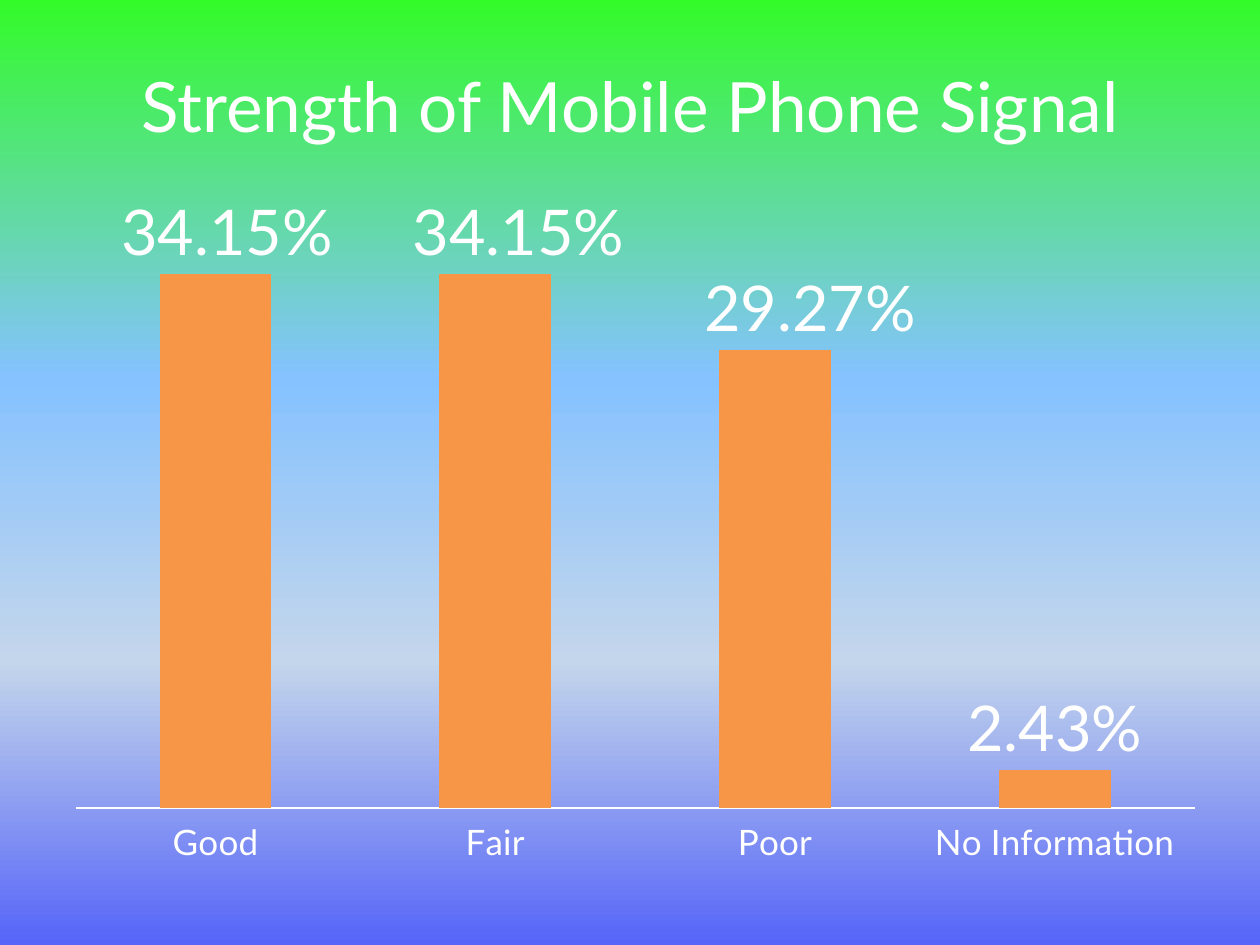
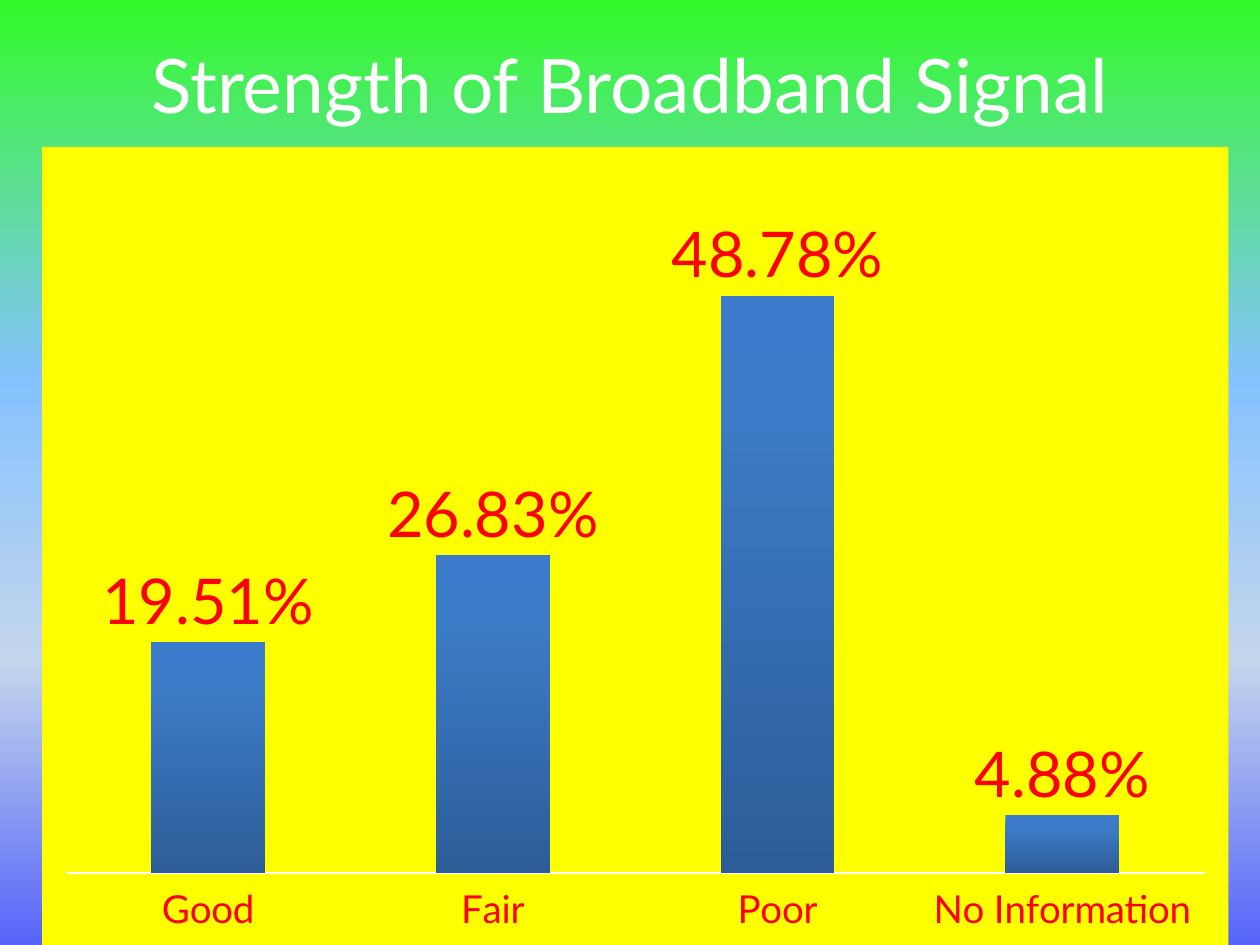
from dataclasses import dataclass
from typing import Optional

from lxml import etree
from pptx import Presentation
from pptx.chart.chart import Chart
from pptx.chart.data import CategoryChartData
from pptx.dml.color import RGBColor
from pptx.dml.fill import FillFormat
from pptx.enum.chart import XL_CHART_TYPE as ChartType
from pptx.enum.chart import XL_LABEL_POSITION as LabelPosition
from pptx.enum.chart import XL_TICK_LABEL_POSITION as TickLabels
from pptx.enum.chart import XL_TICK_MARK as TickMark
from pptx.enum.text import MSO_ANCHOR as Anchor
from pptx.enum.text import MSO_AUTO_SIZE as AutoSize
from pptx.enum.text import PP_ALIGN as Align
from pptx.oxml import parse_xml
from pptx.oxml.ns import nsdecls, qn
from pptx.slide import Slide
from pptx.util import Pt

PX = 7620  # EMU in one px, 120 px to the inch
WHITE, RED, YELLOW, ORANGE = "FFFFFF", "FF0000", "FFFF00", "F79646"
TEXT_FONT, CHART_FONT = "Lato", "Calibri"
LABEL_SIZE = 36
RATINGS = ("Good", "Fair", "Poor", "No Information")
TITLE_ONLY = 5

Stops = tuple[tuple[int, str], ...]
SKY: Stops = ((0, "33FB29"), (40, "85C2FF"), (70, "C4D6EB"), (100, "5665F8"))
BLUE_SHEEN: Stops = ((0, "3A7CCB"), (20, "3C7BC7"), (100, "2C5D98"))


@dataclass(frozen=True)
class Box:
    left: int
    top: int
    width: int
    height: int

    def emu(self) -> tuple[int, int, int, int]:
        return self.left * PX, self.top * PX, self.width * PX, self.height * PX


@dataclass(frozen=True)
class SignalPage:
    title: str
    title_box: Box
    title_size: float
    chart_box: Box
    shares: tuple[float, ...]
    axis_max: int
    text_color: str
    axis_size: int
    bar_color: Optional[str] = None  # None gives the blue sheen
    panel_color: Optional[str] = None
    label_shifts: tuple[float, ...] = (0, 0, 0, 0)  # share of chart width


PAGES = (
    SignalPage("Strength of Mobile Phone Signal", Box(60, 50, 1080, 100), 39.6,
               Box(50, 160, 1110, 670), (34.15, 34.15, 29.27, 2.43), 40,
               WHITE, 20, bar_color=ORANGE, label_shifts=(0.01, 0.02, 0.03, 0)),
    SignalPage("Strength of Broadband Signal", Box(60, 30, 1080, 100), 42.9,
               Box(40, 140, 1130, 760), (19.51, 26.83, 48.78, 4.88), 60,
               RED, 22, panel_color=YELLOW),
)


def rgb(color: str) -> RGBColor:
    return RGBColor.from_string(color)


def style_font(font, size: float, color: str, name: str = TEXT_FONT) -> None:
    font.size = Pt(size)
    font.name = name
    font.bold = False
    font.color.rgb = rgb(color)


def fill_downwards(fill: FillFormat, owner, stops: Stops) -> None:
    """Give the fill inside the owner element a gradient from top to bottom."""
    fill.gradient()
    fill.gradient_angle = 270
    stop_list = owner.find(".//" + qn("a:gsLst"))
    for stop in list(stop_list):
        stop_list.remove(stop)
    for percent, color in stops:
        stop = etree.SubElement(stop_list, qn("a:gs"), pos=str(percent * 1000))
        etree.SubElement(stop, qn("a:srgbClr"), val=color)


def manual_layout(**parts: object):
    items = "".join(f'<c:{tag} val="{value}"/>' for tag, value in parts.items())
    return parse_xml(f'<c:layout {nsdecls("c")}><c:manualLayout>{items}'
                     '</c:manualLayout></c:layout>')


def place_plot(chart: Chart) -> None:
    plot_area = chart._chartSpace.chart.plotArea
    for old in plot_area.findall(qn("c:layout")):
        plot_area.remove(old)
    plot_area.insert(0, manual_layout(
        layoutTarget="inner", xMode="edge", yMode="edge",
        x=0.02, y=0.02, w=0.96, h=0.89))


def fill_panel(chart: Chart, color: Optional[str]) -> None:
    paint = (f'<a:solidFill><a:srgbClr val="{color}"/></a:solidFill>'
             if color else "<a:noFill/>")
    chart._chartSpace.chart.addnext(parse_xml(
        f'<c:spPr {nsdecls("c", "a")}>{paint}<a:ln><a:noFill/></a:ln></c:spPr>'))


def style_axes(chart: Chart, page: SignalPage) -> None:
    ratings = chart.category_axis
    ratings.major_tick_mark = ratings.minor_tick_mark = TickMark.NONE
    ratings.tick_label_position = TickLabels.LOW
    ratings.format.line.color.rgb = rgb(WHITE)
    ratings.format.line.width = Pt(1)
    style_font(ratings.tick_labels.font, page.axis_size, page.text_color)
    shares = chart.value_axis
    shares.minimum_scale, shares.maximum_scale = 0, page.axis_max
    shares.has_major_gridlines = False
    shares.visible = False


def label_bars(series, page: SignalPage) -> None:
    labels = series.data_labels
    labels.show_value = True
    labels.position = LabelPosition.OUTSIDE_END
    style_font(labels.font, LABEL_SIZE, page.text_color)
    for index, (share, shift) in enumerate(zip(page.shares, page.label_shifts)):
        label = series.points[index].data_label
        label.text_frame.text = f"{share:.2f}%"
        style_font(label.text_frame.paragraphs[0].runs[0].font,
                   LABEL_SIZE, page.text_color)
        label.position = LabelPosition.OUTSIDE_END
        if shift:
            element = labels._element.findall(qn("c:dLbl"))[index]
            element.find(qn("c:idx")).addnext(manual_layout(x=shift, y=0))


def add_signal_chart(slide: Slide, page: SignalPage) -> None:
    data = CategoryChartData()
    data.categories = RATINGS
    data.add_series("Series 1", page.shares)
    chart = slide.shapes.add_chart(
        ChartType.COLUMN_CLUSTERED, *page.chart_box.emu(), data).chart
    chart.has_title = chart.has_legend = False
    style_font(chart.font, 10, WHITE, CHART_FONT)
    fill_panel(chart, page.panel_color)
    place_plot(chart)
    style_axes(chart, page)

    plot = chart.plots[0]
    plot.vary_by_categories = False
    plot.gap_width = 150
    bars = plot.series[0]
    bars.invert_if_negative = False
    if page.bar_color:
        bars.format.fill.solid()
        bars.format.fill.fore_color.rgb = rgb(page.bar_color)
    else:
        fill_downwards(bars.format.fill, bars._element, BLUE_SHEEN)
    label_bars(bars, page)


def add_title(slide: Slide, page: SignalPage) -> None:
    title = slide.shapes.title
    title.left, title.top, title.width, title.height = page.title_box.emu()
    frame = title.text_frame
    frame.text = page.title
    frame.auto_size = AutoSize.NONE
    frame.vertical_anchor = Anchor.MIDDLE
    para = frame.paragraphs[0]
    para.alignment = Align.CENTER
    style_font(para.runs[0].font, page.title_size, WHITE)


def main() -> None:
    deck = Presentation()
    deck.slide_width, deck.slide_height = 1200 * PX, 900 * PX
    master = deck.slide_master
    fill_downwards(master.background.fill, master.element, SKY)
    for page in PAGES:
        slide = deck.slides.add_slide(deck.slide_layouts[TITLE_ONLY])
        add_title(slide, page)
        add_signal_chart(slide, page)
    deck.save("out.pptx")


if __name__ == "__main__":
    main()
